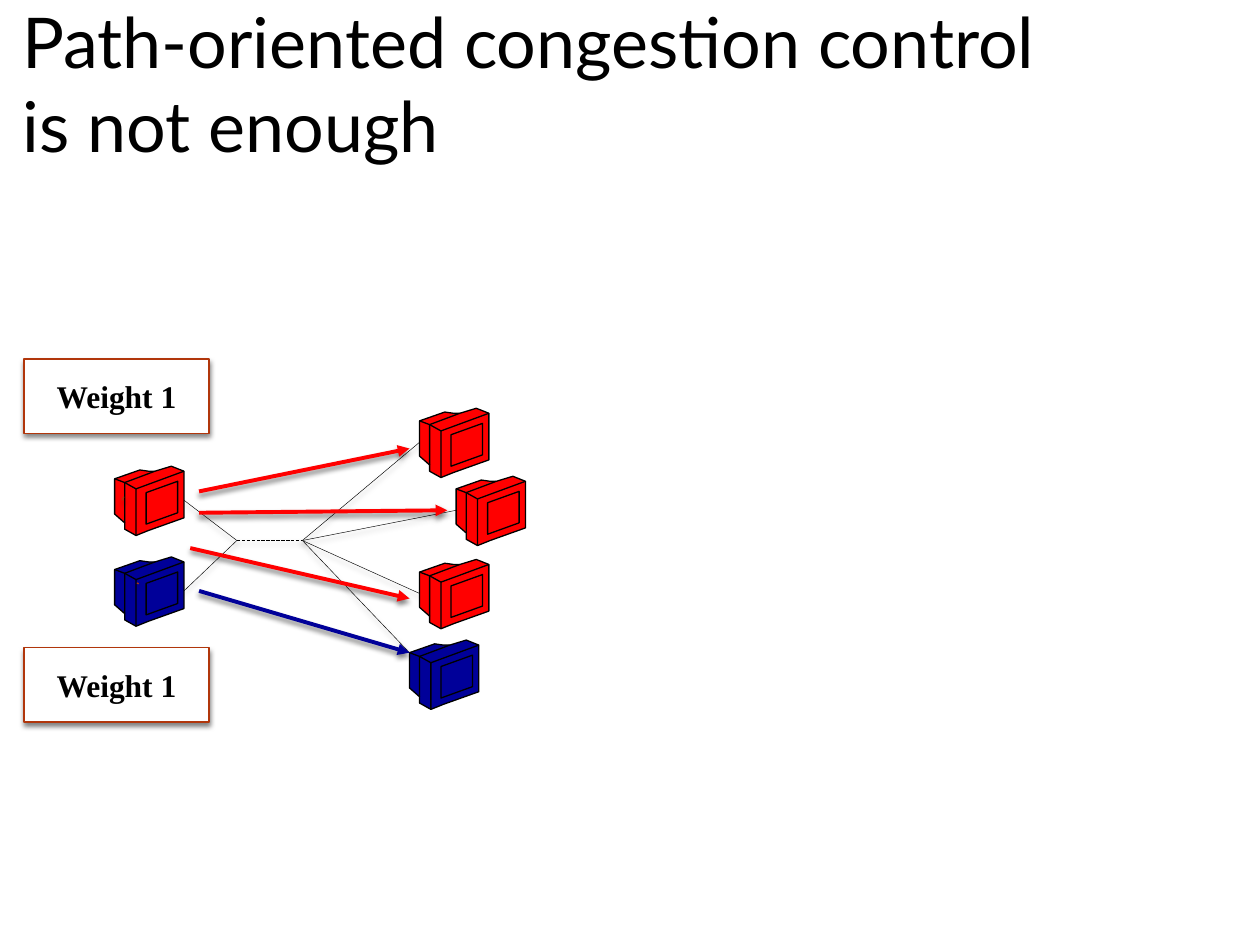
from copy import deepcopy

from lxml.etree import SubElement
from pptx import Presentation
from pptx.dml.color import RGBColor
from pptx.enum.dml import MSO_LINE
from pptx.enum.shapes import MSO_CONNECTOR, MSO_SHAPE
from pptx.enum.text import MSO_ANCHOR, MSO_AUTO_SIZE, PP_ALIGN
from pptx.oxml.ns import qn
from pptx.util import Inches, Pt

COLORS = {"ink": "000000", "paper": "FFFFFF", "red": "FF0000",
          "blue": "000099", "border": "B1360B"}
SLIDE_WIDTH, SLIDE_HEIGHT = Inches(10), Inches(7.5)
CELL = SLIDE_WIDTH // 1000
MONITOR_SIZE, MONITOR_MIDDLE = 55, 27
MONITOR_BODY = [(17, 55), (8, 50), (8, 45), (0, 38), (0, 10), (20, 3), (27, 4),
                (32, 4), (45, 0), (55, 4), (55, 41), (27, 51)]
MONITOR_EDGES = [
    [(17, 18), (8, 13), (0, 10)],
    [(50, 37), (50, 12), (25, 21), (25, 46), (50, 37)],
    [(8, 45), (8, 13), (32, 4)],
    [(55, 4), (17, 18), (17, 55)],
]
FAN_IN, FAN_OUT = (169, 144), (221, 144)
SENDERS = [(72, 85, "red"), (72, 157, "blue")]
RECEIVERS = [(314, 39, "red", MONITOR_MIDDLE), (343, 93, "red", MONITOR_MIDDLE),
             (314, 159, "red", MONITOR_MIDDLE), (306, 223, "blue", 10)]
FLOWS = [((139, 105), (306, 71), "red"), ((139, 122), (336, 120), "red"),
         ((132, 150), (306, 190), "red"), ((139, 184), (306, 233), "blue")]
WEIGHTS = [(0, (1.9, 0.53, 1.85, 0.54)), (229, (-0.87, 0.61, -0.86, 0.62))]


def rgb(name):
    """Return the palette colour with this name."""
    return RGBColor.from_string(COLORS[name])


def style_line(line, color, width):
    """Give a line its colour and width."""
    line.color.rgb = rgb(color)
    line.width = Pt(width)


def style_run(run, size, font, bold=False):
    """Format one run of black text."""
    run.font.size, run.font.name, run.font.bold = Pt(size), font, bold
    run.font.color.rgb = rgb("ink")


def cast_shadow(item):
    """Replace the theme effect with a soft shadow straight below."""
    effects = SubElement(item._element.spPr, qn("a:effectLst"))
    shadow = SubElement(effects, qn("a:outerShdw"), blurRad=str(Pt(3)),
                        dist=str(Pt(2)), dir="5400000", rotWithShape="0")
    color = SubElement(shadow, qn("a:srgbClr"), val=COLORS["ink"])
    SubElement(color, qn("a:alpha"), val="50000")


def place(box, point):
    """Turn a grid point within the box into slide lengths."""
    return [(origin + offset) * CELL for origin, offset in zip(box, point)]


def add_link(slide, box, start, end, color="ink", width=0.25):
    """Draw a shadowed straight line between two grid points."""
    link = slide.shapes.add_connector(
        MSO_CONNECTOR.STRAIGHT, *place(box, start), *place(box, end))
    style_line(link.line, color, width)
    cast_shadow(link)
    return link


def add_flow(slide, box, start, end, color):
    """Draw one thick arrow for a traffic flow."""
    flow = add_link(slide, box, start, end, color, 2.25)
    SubElement(flow.line._get_or_add_ln(), qn("a:tailEnd"), type="triangle")


def add_monitor(slide, box, corner, color):
    """Draw a computer with a filled body and unfilled inner edges."""
    builder = slide.shapes.build_freeform(*MONITOR_BODY[0], scale=CELL)
    builder.add_line_segments(MONITOR_BODY[1:], close=True)
    for start, *points in MONITOR_EDGES:
        builder.move_to(*start)
        builder.add_line_segments(points, close=False)
    monitor = builder.convert_to_shape(*place(box, corner))
    monitor.shadow.inherit = False
    monitor.fill.solid()
    monitor.fill.fore_color.rgb = rgb(color)
    style_line(monitor.line, "ink", 0.75)

    body = next(monitor._element.iter(qn("a:path")))
    edges = deepcopy(body)
    edges.set("fill", "none")
    body.addnext(edges)
    split = [step.tag for step in body].index(qn("a:close")) + 1
    for surplus in list(body)[split:]:
        body.remove(surplus)
    for surplus in list(edges)[:split]:
        edges.remove(surplus)


def add_weight(slide, box, top, pointer):
    """Add one weight callout at the left edge of the box."""
    weight = slide.shapes.add_shape(
        MSO_SHAPE.LINE_CALLOUT_1, *place(box, (0, top)), 147 * CELL, 59 * CELL)
    for index, value in enumerate(pointer):
        weight.adjustments[index] = value
    weight.fill.solid()
    weight.fill.fore_color.rgb = rgb("paper")
    style_line(weight.line, "border", 0.75)
    cast_shadow(weight)
    frame = weight.text_frame
    frame.vertical_anchor = MSO_ANCHOR.MIDDLE
    label = frame.paragraphs[0]
    label.alignment = PP_ALIGN.CENTER
    run = label.add_run()
    run.text = "Weight 1"
    style_run(run, 18, "Times New Roman", True)


def add_network(slide, box):
    """Draw the shared path, its computers, weights and flows."""
    bottleneck = add_link(slide, box, FAN_IN, FAN_OUT)
    bottleneck.line.dash_style = MSO_LINE.LONG_DASH
    for left, top, color in SENDERS:
        add_link(slide, box, (left + MONITOR_SIZE, top + MONITOR_MIDDLE), FAN_IN)
        add_monitor(slide, box, (left, top), color)
    for left, top, color, port in RECEIVERS:
        add_link(slide, box, (left, top + port), FAN_OUT)
        add_monitor(slide, box, (left, top), color)
    for top, pointer in WEIGHTS:
        add_weight(slide, box, top, pointer)
    for start, end, color in FLOWS:
        add_flow(slide, box, start, end, color)


def add_title(slide, left, top, width, height):
    """Fill the title placeholder within the given grid box."""
    title = slide.shapes.title
    title.left, title.top = left * CELL, top * CELL
    title.width, title.height = width * CELL, height * CELL
    frame = title.text_frame
    frame.word_wrap = True
    frame.auto_size = MSO_AUTO_SIZE.NONE
    frame.vertical_anchor = MSO_ANCHOR.BOTTOM
    frame.margin_left = frame.margin_right = frame.margin_bottom = Inches(0.1)
    frame.margin_top = Inches(0.05)
    heading = frame.paragraphs[0]
    heading.alignment = PP_ALIGN.LEFT
    run = heading.add_run()
    run.text = "Path-oriented congestion control is not enough"
    style_run(run, 40, "Lato")


def main():
    """Build and save the slide."""
    deck = Presentation()
    deck.slide_width, deck.slide_height = SLIDE_WIDTH, SLIDE_HEIGHT
    slide = deck.slides.add_slide(deck.slide_layouts[5])
    add_title(slide, 8, 17, 850, 125)
    add_network(slide, (19, 285))
    deck.save("out.pptx")


if __name__ == "__main__":
    main()
